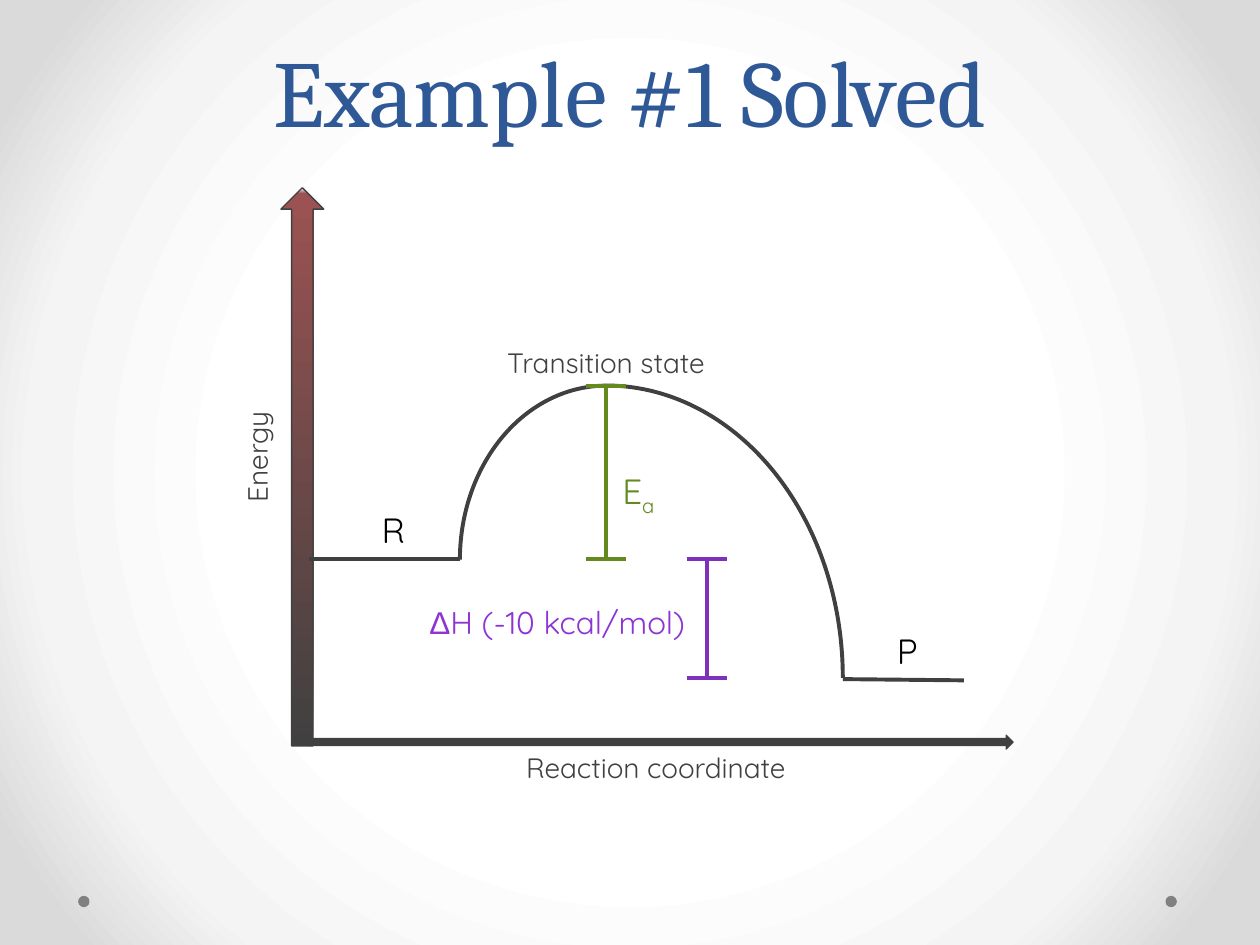
import lxml.etree
import pptx
import pptx.dml.color
import pptx.enum.shapes
import pptx.enum.text
import pptx.oxml.ns
import pptx.util

Inches = pptx.util.Inches
Shape = pptx.enum.shapes.MSO_SHAPE
Align = pptx.enum.text.PP_ALIGN
Anchor = pptx.enum.text.MSO_ANCHOR
AutoSize = pptx.enum.text.MSO_AUTO_SIZE
qn = pptx.oxml.ns.qn

DARK, GREEN, PURPLE, VIOLET = "404040", "63891F", "7E31BA", "8D35D4"


def color(hex_code):
    return pptx.dml.color.RGBColor.from_string(hex_code)


def set_gradient(fill, element, stops, angle=None):
    """Fill with (percent, colour) stops, linear at an angle or else circular."""
    fill.gradient()
    gradient = next(element.iter(qn("a:gradFill")))
    for child in list(gradient):
        gradient.remove(child)
    stop_list = lxml.etree.SubElement(gradient, qn("a:gsLst"))
    for percent, hex_code in stops:
        stop = lxml.etree.SubElement(stop_list, qn("a:gs"), pos=str(percent * 1000))
        lxml.etree.SubElement(stop, qn("a:srgbClr"), val=hex_code)
    if angle is not None:
        lxml.etree.SubElement(gradient, qn("a:lin"), ang=str(angle * 60000), scaled="0")
    else:
        center = lxml.etree.SubElement(gradient, qn("a:path"))
        center.set("path", "circle")
        sides = dict.fromkeys("ltrb", "50000")
        lxml.etree.SubElement(center, qn("a:fillToRect"), **sides)


def add_span(para, text, size, font, hex_code, baseline=None):
    span = para.add_run()
    span.text = text
    span.font.size = pptx.util.Pt(size)
    span.font.name = font
    span.font.color.rgb = color(hex_code)
    if baseline is not None:
        span.font._element.set("baseline", str(baseline * 1000))


def add_text(page, box, spans, size=16, hex_code=DARK, align=Align.LEFT,
             rotation=0, wrap=True):
    """Add a text box; each span is a text and its differing format."""
    label = page.shapes.add_textbox(*map(Inches, box))
    label.rotation = rotation
    frame = label.text_frame
    frame.word_wrap = wrap
    frame.auto_size = AutoSize.SHAPE_TO_FIT_TEXT
    para = frame.paragraphs[0]
    para.alignment = align
    for text, changes in spans:
        style = {"size": size, "font": "Quicksand", "hex_code": hex_code} | changes
        add_span(para, text, **style)


def add_shape(page, kind, box, fill=None, line=None, width=0.75, rotation=0):
    shape = page.shapes.add_shape(kind, *map(Inches, box))
    shape.shadow.inherit = False
    shape.rotation = rotation
    if fill:
        shape.fill.solid()
        shape.fill.fore_color.rgb = color(fill)
    else:
        shape.fill.background()
    if line:
        shape.line.color.rgb = color(line)
        shape.line.width = pptx.util.Pt(width)
    else:
        shape.line.fill.background()
    return shape


def add_line(page, start, end, hex_code=DARK):
    line = page.shapes.add_connector(
        pptx.enum.shapes.MSO_CONNECTOR.STRAIGHT, *map(Inches, (*start, *end)))
    line.line.color.rgb = color(hex_code)
    line.line.width = pptx.util.Pt(2.25)
    lxml.etree.SubElement(line._element.spPr, qn("a:effectLst"))


def add_span_marker(page, x, top, bottom, hex_code):
    """Draw a vertical measure with a cap at each end."""
    half_cap = 0.16
    add_line(page, (x, top), (x, bottom), hex_code)
    for y in (top, bottom):
        add_line(page, (x - half_cap, y), (x + half_cap, y), hex_code)


def add_backdrop(page):
    set_gradient(page.background.fill, page.element,
                 [(50, "FFFFFF"), (76, "F4F4F4"), (92, "DADADA")])
    for left in (0.62, 9.25):
        add_shape(page, Shape.OVAL, (left, 7.11, 0.09, 0.09), fill="808080")


def add_title(page, box, text):
    title = page.shapes.title
    title.left, title.top, title.width, title.height = map(Inches, box)
    frame = title.text_frame
    frame.auto_size = AutoSize.NONE
    frame.vertical_anchor = Anchor.BOTTOM
    para = frame.paragraphs[0]
    para.alignment = Align.CENTER
    para.line_spacing = pptx.util.Pt(58)
    add_span(para, text, 54, "Cambria", "2F5897")


def add_axes(page, box):
    left, top, width, height = box
    energy = add_shape(page, Shape.UP_ARROW, (left, top, 0.34, height),
                       fill=DARK, line=DARK)
    set_gradient(energy.fill, energy.element,
                 [(0, DARK), (99, "9C5252"), (100, "FFFFFF")], angle=270)
    thick, length = 0.11, width - 0.22
    middle_x, middle_y = left + width - length / 2, top + height - 0.03
    add_shape(page, Shape.UP_ARROW,
              (middle_x - thick / 2, middle_y - length / 2, thick, length),
              fill=DARK, line=DARK, rotation=90)
    add_text(page, (left + 1.69, top + height - 0.01, 2.57, 0.37),
             [("Reaction coordinate", {})], align=Align.CENTER)
    add_text(page, (left - 1, top + 1.95, 1.62, 0.37),
             [("Energy", {})], align=Align.CENTER, rotation=270)


def add_energy_curve(page, box):
    """Draw reactant level, rise, fall and product level, with their measures."""
    left, peak, width, height = box
    right, product = left + width, peak + height
    reactant = peak + 1.38
    rise_x, peak_x, fall_x = left + 1.2, left + 2.36, left + 4.24

    add_line(page, (left, reactant), (rise_x, reactant))
    rise_width, rise_height = 2 * (peak_x - rise_x), 2 * (reactant - peak)
    add_shape(page, Shape.ARC,
              (peak_x - rise_height / 2, reactant - rise_width / 2,
               rise_height, rise_width), line=DARK, width=2.25, rotation=270)
    fall_width = 2 * (fall_x - peak_x)
    add_shape(page, Shape.ARC, (fall_x - fall_width, peak, fall_width, 2 * height),
              line=DARK, width=2.25)
    add_line(page, (fall_x, product + 0.01), (right, product + 0.02))

    add_span_marker(page, peak_x, peak, reactant, GREEN)
    add_span_marker(page, left + 3.16, reactant, product, PURPLE)

    add_text(page, (left + 0.48, reactant - 0.45, 0.38, 0.44), [("R", {})],
             size=20, hex_code="000000")
    add_text(page, (left + 4.57, product - 0.43, 0.38, 0.44), [("P", {})],
             size=20, hex_code="000000")
    add_text(page, (peak_x + 0.03, peak + 0.62, 0.61, 0.44),
             [("E", {}), ("a", {"baseline": -25})], size=20, hex_code=GREEN)
    add_text(page, (left + 0.86, reactant + 0.3, 2.29, 0.4),
             [("Δ", {"font": "Arial"}), ("H (-10 kcal/mol)", {})],
             size=18, hex_code=VIOLET, wrap=False)
    add_text(page, (peak_x - 0.9, peak - 0.37, 1.8, 0.37),
             [("Transition state", {})], align=Align.CENTER)


def main():
    deck = pptx.Presentation()
    deck.slide_width, deck.slide_height = Inches(10), Inches(7.5)
    page = deck.slides.add_slide(deck.slide_layouts[5])
    add_backdrop(page)
    add_title(page, (0.5, 0, 9, 1.21), "Example #1 Solved")
    add_axes(page, (2.23, 1.49, 5.81, 4.43))
    add_energy_curve(page, (2.45, 3.06, 5.2, 2.32))
    deck.save("out.pptx")


if __name__ == "__main__":
    main()
